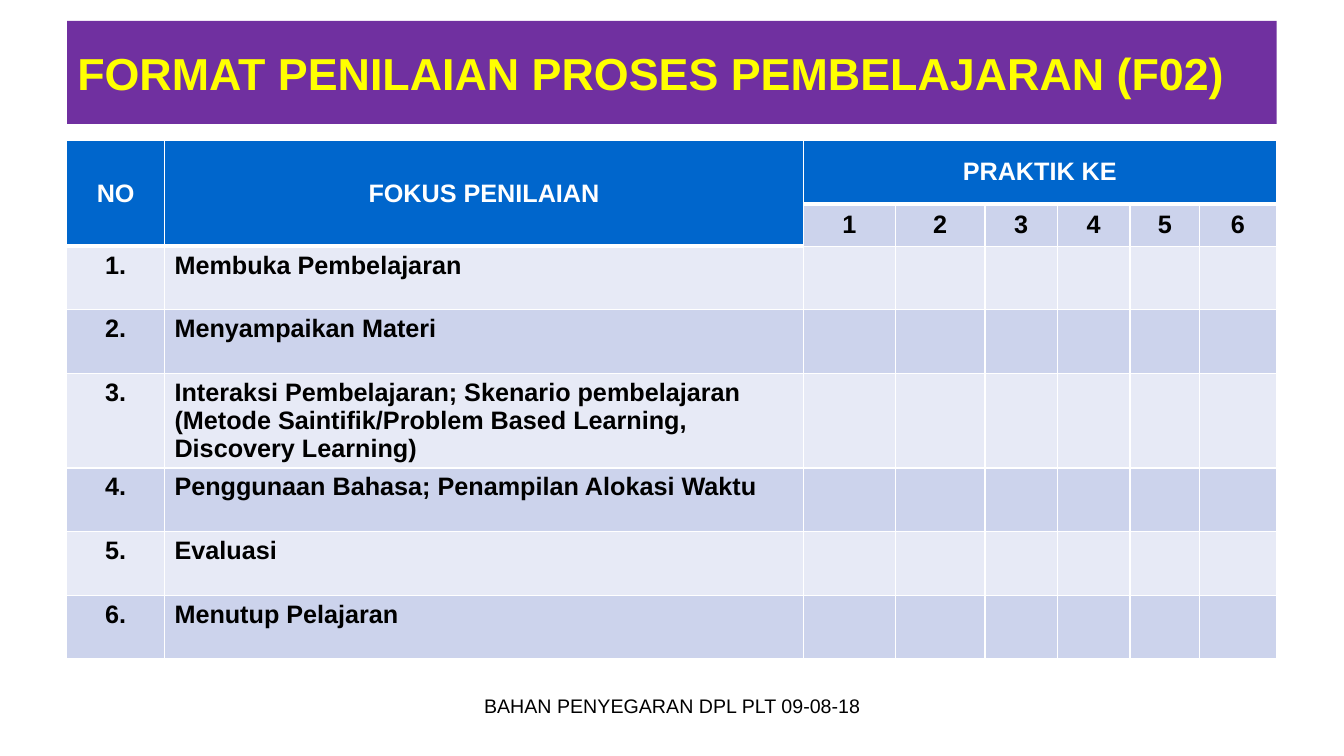
from lxml.etree import SubElement
from pptx import Presentation
from pptx.dml.color import RGBColor
from pptx.enum.text import MSO_ANCHOR as Anchor, PP_ALIGN as Align
from pptx.oxml.ns import qn
from pptx.util import Pt

FONT = "Arial"
PURPLE = RGBColor(0x70, 0x30, 0xA0)
YELLOW = RGBColor(0xFF, 0xFF, 0x00)
BLUE = RGBColor(0x00, 0x66, 0xCC)
DARK_BAND = RGBColor(0xCC, 0xD3, 0xEC)
LIGHT_BAND = RGBColor(0xE7, 0xEA, 0xF6)
WHITE = RGBColor(0xFF, 0xFF, 0xFF)
BLACK = RGBColor(0x00, 0x00, 0x00)

COLUMN_WIDTHS = [69.8, 456.5, 65.5, 64.1, 51.8, 51.8, 49.7, 54.7]
ROW_HEIGHT, NUMBER_ROW_HEIGHT = 45.4, 30.2
HEADER_ROWS = 2
LABEL_COLUMNS = 2
HEADINGS = ["NO", "FOKUS PENILAIAN", "PRAKTIK KE"]
FOCUS_ITEMS = [
    "Membuka Pembelajaran",
    "Menyampaikan Materi",
    "Interaksi Pembelajaran; Skenario pembelajaran "
    "(Metode Saintifik/Problem Based Learning, Discovery Learning)",
    "Penggunaan Bahasa; Penampilan Alokasi Waktu",
    "Evaluasi",
    "Menutup Pelajaran",
]


def write(frame, text, size, color, bold=False, align=Align.LEFT):
    para = frame.paragraphs[0]
    para.alignment = align
    span = para.add_run()
    span.text = text
    span.font.name = FONT
    span.font.size = Pt(size)
    span.font.bold = bold
    span.font.color.rgb = color


def add_title(page, text):
    title = page.shapes.title
    title.left, title.top, title.width, title.height = Pt(48), Pt(15), Pt(864), Pt(73.5)
    title.fill.solid()
    title.fill.fore_color.rgb = PURPLE
    title.text_frame.word_wrap = True
    title.text_frame.vertical_anchor = Anchor.MIDDLE
    write(title.text_frame, text, 32, YELLOW, bold=True)


def add_footer(page, text):
    box = page.shapes.add_textbox(Pt(328.3), Pt(491.8), Pt(303.8), Pt(37.4))
    box.text_frame.word_wrap = True
    write(box.text_frame, text, 14, BLACK, align=Align.CENTER)


def is_heading(row, column):
    return row == 0 or (row < HEADER_ROWS and column < LABEL_COLUMNS)


def set_borders(cell, top, bottom):
    properties = cell._tc.get_or_add_tcPr()
    for side, width in (("L", 1), ("R", 1), ("T", top), ("B", bottom)):
        line = SubElement(properties, qn(f"a:ln{side}"), w=str(Pt(width)))
        fill = SubElement(line, qn("a:solidFill"))
        SubElement(fill, qn("a:srgbClr"), val=str(WHITE))


def style_cell(cell, row, column):
    heading = is_heading(row, column)
    below_heading = row > 0 and is_heading(row - 1, column)
    set_borders(cell, 3 if below_heading and not heading else 1, 3 if heading else 1)
    cell.fill.solid()
    band = DARK_BAND if row % 2 else LIGHT_BAND
    cell.fill.fore_color.rgb = BLUE if heading else band
    cell.vertical_anchor = Anchor.MIDDLE if row < HEADER_ROWS else Anchor.TOP


def add_assessment_table(page):
    row_count = HEADER_ROWS + len(FOCUS_ITEMS)
    column_count = len(COLUMN_WIDTHS)
    table = page.shapes.add_table(
        row_count, column_count, Pt(47.7), Pt(100.3),
        Pt(sum(COLUMN_WIDTHS)), Pt(ROW_HEIGHT * row_count),
    ).table
    table.first_row = table.horz_banding = False

    # Grid and cell style
    for column, width in zip(table.columns, COLUMN_WIDTHS):
        column.width = Pt(width)
    for r, row in enumerate(table.rows):
        row.height = Pt(NUMBER_ROW_HEIGHT if r == 1 else ROW_HEIGHT)
        for c, cell in enumerate(row.cells):
            style_cell(cell, r, c)

    # Headings
    for c in range(LABEL_COLUMNS):
        table.cell(0, c).merge(table.cell(1, c))
    table.cell(0, LABEL_COLUMNS).merge(table.cell(0, column_count - 1))
    for c, heading in enumerate(HEADINGS):
        write(table.cell(0, c).text_frame, heading, 18, WHITE, True, Align.CENTER)
    for number, c in enumerate(range(LABEL_COLUMNS, column_count), start=1):
        write(table.cell(1, c).text_frame, str(number), 18, BLACK, True, Align.CENTER)

    # Assessed items
    for number, item in enumerate(FOCUS_ITEMS, start=1):
        r = HEADER_ROWS + number - 1
        write(table.cell(r, 0).text_frame, f"{number}.", 18, BLACK, True, Align.CENTER)
        write(table.cell(r, 1).text_frame, item, 18, BLACK, True)


def main():
    deck = Presentation()
    deck.slide_width, deck.slide_height = Pt(960), Pt(540)
    page = deck.slides.add_slide(deck.slide_layouts[5])
    add_title(page, "FORMAT PENILAIAN PROSES PEMBELAJARAN (F02)")
    add_assessment_table(page)
    add_footer(page, "BAHAN PENYEGARAN DPL PLT 09-08-18")
    deck.save("out.pptx")


if __name__ == "__main__":
    main()
